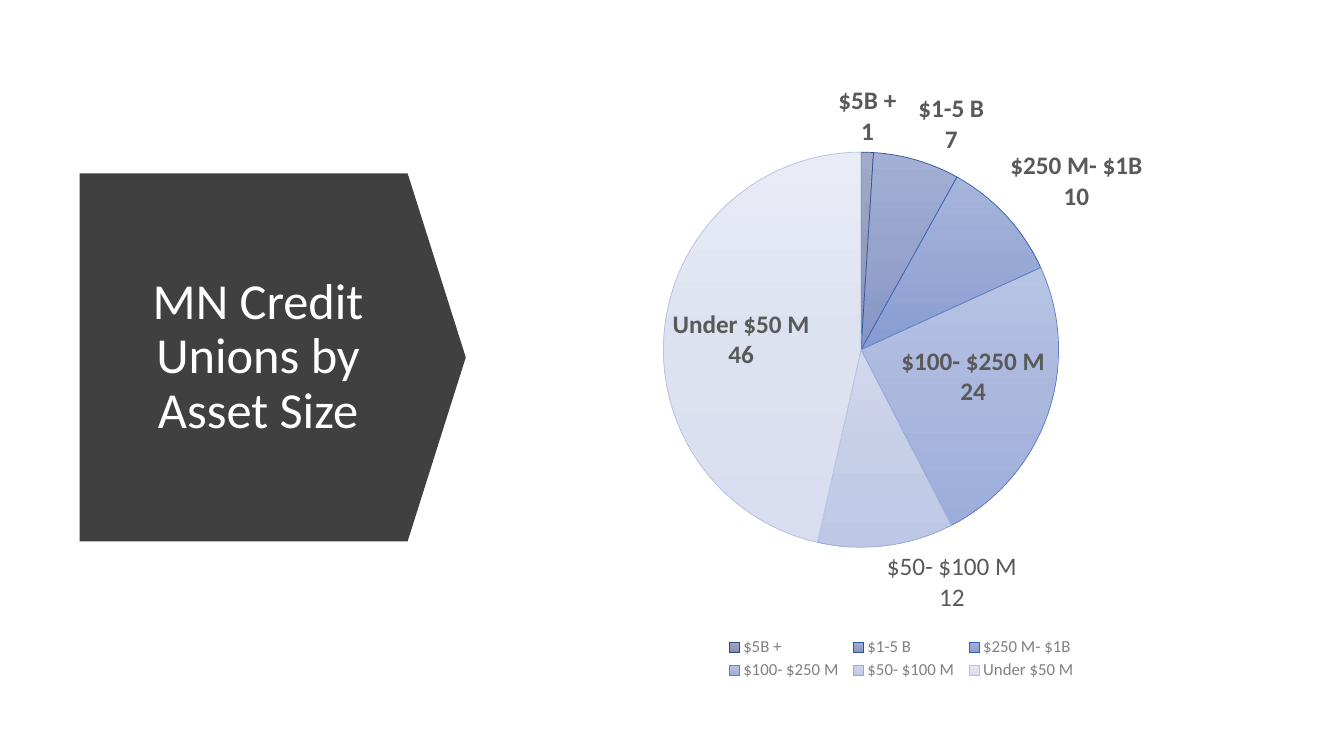
from dataclasses import dataclass

from lxml import etree
from pptx import Presentation
from pptx.chart.data import CategoryChartData
from pptx.dml.color import RGBColor
from pptx.enum.chart import XL_CHART_TYPE, XL_LABEL_POSITION, XL_LEGEND_POSITION
from pptx.enum.shapes import MSO_SHAPE
from pptx.enum.text import MSO_ANCHOR, PP_ALIGN
from pptx.oxml import parse_xml
from pptx.oxml.ns import nsdecls, qn
from pptx.util import Inches, Pt

PIE = XL_CHART_TYPE.PIE
BEST_FIT = XL_LABEL_POSITION.BEST_FIT
LEGEND_BOTTOM = XL_LEGEND_POSITION.BOTTOM
DOWN_ARROW = MSO_SHAPE.DOWN_ARROW
MIDDLE = MSO_ANCHOR.MIDDLE
CENTER = PP_ALIGN.CENTER

FONT = "Calibri"
COLORS = {
    "arrow": "404040",
    "title": "FFFFFF",
    "label": "595959",
    "legend": "808080",
    "chart": "000000",
}


@dataclass(frozen=True)
class Box:
    """A rectangle in inches."""
    left: float
    top: float
    width: float
    height: float


CHART_BOX = Box(5.22, 0.7, 7.42, 6.09)
# Measured from the corner of the chart
PIE_BOX = Box(1.36, 0.81, 3.92, 3.92)
LEGEND_BOX = Box(1.92, 5.59, 3.6, 0.49)


@dataclass(frozen=True)
class AssetBand:
    name: str
    unions: int
    gradient: tuple[str, str, str]
    border: str
    label: tuple[str, ...] = ()


BANDS = [
    AssetBand("$5B +", 1, ("A1AAC7", "949EBC", "818EB5"), "2F4A80"),
    AssetBand("$1-5 B", 7, ("A3AFD5", "96A3CB", "8394C6"), "2F549B"),
    AssetBand("$250 M- $1B", 10, ("A7B5DB", "99A9D5", "869BD2"), "3560B5"),
    AssetBand("$100- $250 M", 24, ("B8C4E4", "ABB8DE", "9CADDC"), "5F7FC9"),
    AssetBand("$50- $100 M", 11, ("D3D9ED", "C6CEE8", "BEC8E6"), "98A9DA",
              ("$50- $100 M", "12")),
    AssetBand("Under $50 M", 46, ("E9ECF6", "DDE2F0", "D8DEEF"), "B5C0E2"),
]


def style_font(font, size: float, color: str, bold: bool = False) -> None:
    font.name = FONT
    font.size = Pt(size)
    font.bold = bold
    font.color.rgb = RGBColor.from_string(color)


def add_title_arrow(slide) -> None:
    arrow = slide.shapes.add_shape(
        DOWN_ARROW, Inches(0.88), Inches(1.63), Inches(3.65), Inches(3.83))
    arrow.rotation = 270
    arrow.adjustments[0] = 1
    arrow.adjustments[1] = 0.158
    arrow.shadow.inherit = False
    arrow.fill.solid()
    arrow.fill.fore_color.rgb = RGBColor.from_string(COLORS["arrow"])
    arrow.line.fill.background()


def add_title(slide) -> None:
    title = slide.shapes.add_textbox(
        Inches(1.12), Inches(2.15), Inches(2.88), Inches(2.79))
    frame = title.text_frame
    frame.word_wrap = True
    frame.vertical_anchor = MIDDLE
    paragraph = frame.paragraphs[0]
    paragraph.text = "MN Credit Unions by Asset Size"
    paragraph.alignment = CENTER
    paragraph.line_spacing = 0.9
    style_font(paragraph.font, 36, COLORS["title"])


def fill_gradient(fill, colors: tuple[str, str, str]) -> None:
    """Fill from top to bottom with evenly spaced stops."""
    fill.gradient()
    fill.gradient_angle = 270
    first_stop, last_stop = fill.gradient_stops
    first_stop.color.rgb = RGBColor.from_string(colors[0])
    first_stop.position = 0
    last_stop.color.rgb = RGBColor.from_string(colors[2])
    last_stop.position = 1
    middle_stop = parse_xml(
        f'<a:gs {nsdecls("a")} pos="50000"><a:srgbClr val="{colors[1]}"/></a:gs>')
    first_stop._gs.addnext(middle_stop)


def build_layout(box: Box, target: str = ""):
    """Return a manual layout that places a chart part in the given box."""
    layout = parse_xml(f'<c:layout {nsdecls("c")}><c:manualLayout/></c:layout>')
    settings = {"layoutTarget": target} if target else {}
    settings |= {
        "xMode": "edge",
        "yMode": "edge",
        "x": box.left / CHART_BOX.width,
        "y": box.top / CHART_BOX.height,
        "w": box.width / CHART_BOX.width,
        "h": box.height / CHART_BOX.height,
    }
    for name, value in settings.items():
        etree.SubElement(layout[0], qn(f"c:{name}")).set("val", str(value))
    return layout


def place_chart_parts(chart) -> None:
    plot_area = chart._chartSpace.chart.plotArea
    legend = chart.legend._element
    for part in (plot_area, legend):
        for automatic in part.findall(qn("c:layout")):
            part.remove(automatic)
    plot_area.insert(0, build_layout(PIE_BOX, "inner"))
    legend.find(qn("c:legendPos")).addnext(build_layout(LEGEND_BOX))


def style_slice(point, band: AssetBand) -> None:
    fill_gradient(point.format.fill, band.gradient)
    point.format.line.color.rgb = RGBColor.from_string(band.border)
    point.format.line.width = Pt(0.5)
    if band.label:
        frame = point.data_label.text_frame
        for index, text in enumerate(band.label):
            paragraph = frame.add_paragraph() if index else frame.paragraphs[0]
            run = paragraph.add_run()
            run.text = text
            style_font(run.font, 18, COLORS["label"])
        point.data_label.position = BEST_FIT


def add_asset_chart(slide) -> None:
    data = CategoryChartData()
    data.categories = [band.name for band in BANDS]
    data.add_series("Series 1", [band.unions for band in BANDS])
    chart = slide.shapes.add_chart(
        PIE, Inches(CHART_BOX.left), Inches(CHART_BOX.top),
        Inches(CHART_BOX.width), Inches(CHART_BOX.height), data).chart
    style_font(chart.font, 10, COLORS["chart"])
    chart.has_title = False
    chart.has_legend = True
    chart.legend.position = LEGEND_BOTTOM
    chart.legend.include_in_layout = False
    style_font(chart.legend.font, 12, COLORS["legend"])
    place_chart_parts(chart)

    plot = chart.plots[0]
    plot.vary_by_categories = True
    series = plot.series[0]
    labels = series.data_labels
    labels.show_category_name = True
    labels.show_value = True
    labels.show_percentage = False
    labels.show_legend_key = False
    labels.position = BEST_FIT
    style_font(labels.font, 18, COLORS["label"], bold=True)
    separator = parse_xml(f'<c:separator {nsdecls("c")}>\n</c:separator>')
    labels._element.find(qn("c:showBubbleSize")).addnext(separator)
    for index, band in enumerate(BANDS):
        style_slice(series.points[index], band)


def main() -> None:
    presentation = Presentation()
    presentation.slide_width = Inches(13.33)
    presentation.slide_height = Inches(7.5)
    slide = presentation.slides.add_slide(presentation.slide_layouts[6])
    add_title_arrow(slide)
    add_title(slide)
    add_asset_chart(slide)
    presentation.save("out.pptx")


if __name__ == "__main__":
    main()
